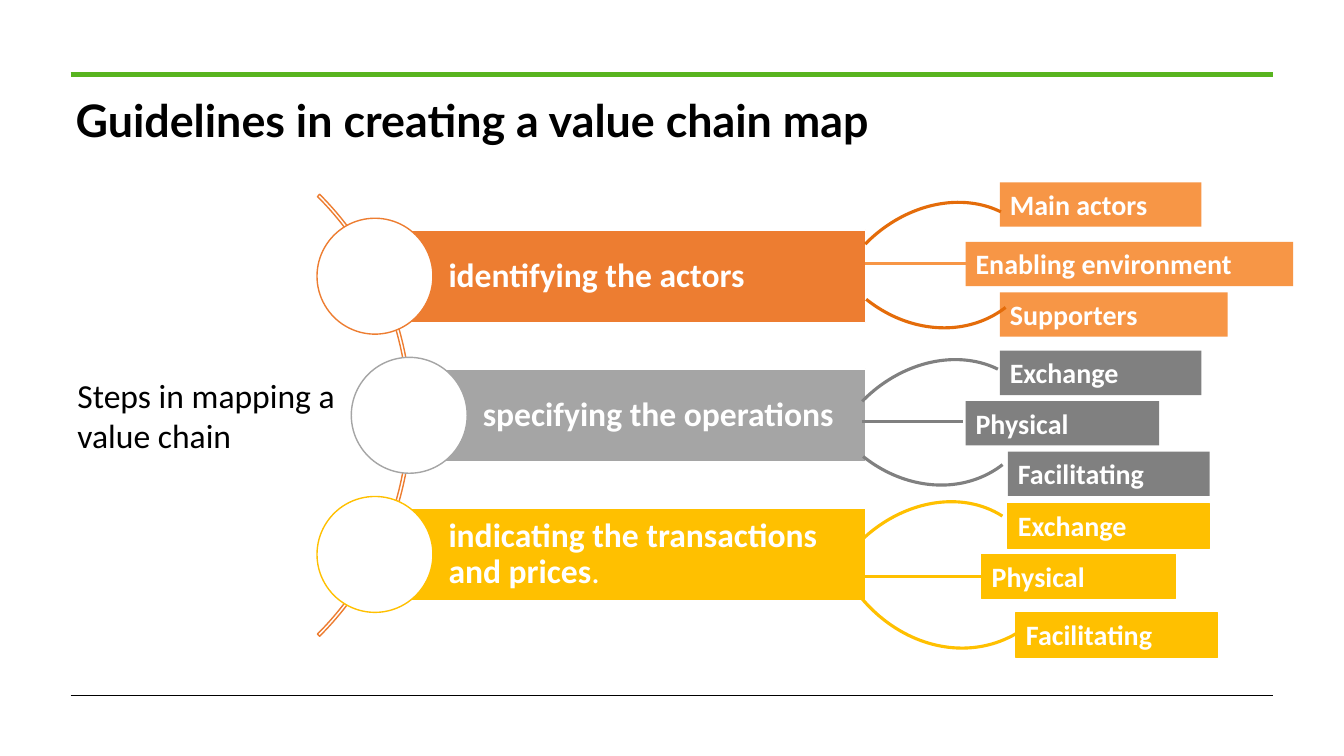
from pptx import Presentation
from pptx.dml.color import RGBColor as Rgb
from pptx.enum.shapes import MSO_CONNECTOR as Link, MSO_SHAPE as Preset
from pptx.enum.text import MSO_ANCHOR as Anchor, MSO_AUTO_SIZE as Fit, PP_ALIGN as Align
from pptx.oxml.ns import qn
from pptx.util import Pt
from lxml import etree

THEME = {
    "white": Rgb.from_string("FFFFFF"),
    "black": Rgb.from_string("000000"),
    "green": Rgb.from_string("58B41F"),
    "orange": Rgb.from_string("ED7D31"),
    "light_orange": Rgb.from_string("F79646"),
    "dark_orange": Rgb.from_string("E46C0A"),
    "silver": Rgb.from_string("A5A5A5"),
    "grey": Rgb.from_string("808080"),
    "gold": Rgb.from_string("FFC000"),
    "title": {"name": "Lato", "size": Pt(32), "bold": True},
    "caption": {"name": "Calibri", "size": Pt(24), "bold": False},
    "step": {"name": "Calibri", "size": Pt(24), "bold": True},
    "label": {"name": "Calibri", "size": Pt(20), "bold": True},
}


def paint(shape, fill=None, line=None, weight=1):
    shape.shadow.inherit = False
    for part, color in ((shape.fill, fill), (shape.line.fill, line)):
        if color:
            part.solid()
            part.fore_color.rgb = THEME[color]
        else:
            part.background()
    if line:
        shape.line.width = Pt(weight)


def write(shape, spans, style, color, frame):
    box = shape.text_frame
    for key, value in ({"word_wrap": True, "vertical_anchor": Anchor.TOP} | frame).items():
        setattr(box, key, value)
    para = box.paragraphs[0]
    para.alignment = Align.LEFT
    for text, changes in spans:
        span = para.add_run()
        span.text = text
        span.font.color.rgb = THEME[color]
        for key, value in (THEME[style] | changes).items():
            setattr(span.font, key, value)
    return para


deck = Presentation()
deck.slide_width, deck.slide_height = Pt(960), Pt(540)
page = deck.slides.add_slide(deck.slide_layouts[6])
shapes = page.shapes

GROW = {"auto_size": Fit.SHAPE_TO_FIT_TEXT}
NO_MARGIN = {f"margin_{side}": 0 for side in ("left", "top", "right", "bottom")}
STEP_FRAME = {
    "vertical_anchor": Anchor.MIDDLE,
    "margin_left": Pt(52.56),
    "margin_top": Pt(5.04),
    "margin_right": Pt(5.04),
    "margin_bottom": Pt(5.04),
}

title = shapes.add_textbox(Pt(54), Pt(66.24), Pt(752.4), Pt(38.88))
write(title, [("Guidelines in creating a value chain map", {})], "title", "black", GROW | NO_MARGIN)

caption = shapes.add_textbox(Pt(48.24), Pt(264.24), Pt(210.24), Pt(65.52))
write(caption, [("Steps in mapping a value chain", {})], "caption", "black", GROW)

spine = shapes.add_shape(Preset.BLOCK_ARC, Pt(-152.64), Pt(73.44), Pt(446.4), Pt(446.4))
for index, value in enumerate((189, 27, 0.005)):
    spine.adjustments[index] = value
paint(spine, line="orange")

BAR_RIGHT, FIRST_BAR, STEP_PITCH = 618.48, 164.16, 99.36
BAR_HEIGHT, CIRCLE = 66.24, 82.8
steps = [
    ("orange", 267.84, [("identifying the actors", {})]),
    ("silver", 292.32, [("specifying the operations", {})]),
    ("gold", 267.84, [("indicating the transactions and prices", {}), (".", {"bold": False})]),
]
for row, (color, left, spans) in enumerate(steps):
    top = FIRST_BAR + row * STEP_PITCH
    bar = shapes.add_shape(Preset.RECTANGLE, Pt(left), Pt(top), Pt(BAR_RIGHT - left), Pt(BAR_HEIGHT))
    paint(bar, color, "white")
    write(bar, spans, "step", "white", STEP_FRAME).line_spacing = 0.9
    circle = shapes.add_shape(
        Preset.OVAL, Pt(left - CIRCLE / 2), Pt(top + (BAR_HEIGHT - CIRCLE) / 2), Pt(CIRCLE), Pt(CIRCLE)
    )
    paint(circle, "white", color)

labels = [
    ("light_orange", None, [
        ("Main actors", 714.24, 130.32, 144),
        ("Supporters", 714.24, 208.8, 162.72),
        ("Enabling environment", 689.76, 172.8, 234),
    ]),
    ("grey", None, [
        ("Exchange", 714.24, 250.56, 144),
        ("Physical", 689.76, 286.56, 138.24),
        ("Facilitating", 720, 322.56, 144),
    ]),
    ("gold", "gold", [
        ("Exchange", 720, 360, 144),
        ("Physical", 701.28, 396, 138.24),
        ("Facilitating", 725.76, 437.76, 144),
    ]),
]
for fill, line, entries in labels:
    for text, left, top, width in entries:
        label = shapes.add_shape(Preset.RECTANGLE, Pt(left), Pt(top), Pt(width), Pt(31.68))
        paint(label, fill, line, 0.75)
        write(label, [(text, {})], "label", "white", GROW)

arcs = [
    ("dark_orange", 582.48, 152.64, 174.24, 144, 314.3, 162, 208.47),
    ("dark_orange", 585.36, 59.04, 156.24, 179.28, 142.3, 162, 205.33),
    ("grey", 580.32, 264.96, 174.24, 144, 314.3, 162, 208.47),
    ("grey", 583.2, 171.36, 156.24, 179.28, 142.3, 162, 205.33),
    ("gold", 577.44, 366.48, 174.24, 144, 314.3, 162, 211.26),
    ("gold", 591.12, 265.68, 172.8, 199.44, 155.2, 158.52, 205.33),
]
for color, left, top, width, height, turn, start, end in arcs:
    arc = shapes.add_shape(Preset.ARC, Pt(left), Pt(top), Pt(width), Pt(height))
    arc.rotation = turn
    arc.adjustments[0], arc.adjustments[1] = start, end
    paint(arc, line=color, weight=2.25)

lines = [
    ("green", 3, 50.4, 909.36, 53.28),
    ("black", 0.48, 50.4, 909.36, 496.8),
    ("light_orange", 2.25, 617.76, 689.76, 187.92),
    ("grey", 2.25, 615.6, 687.6, 300.96),
    ("gold", 2.25, 617.76, 701.28, 411.84),
]
for color, weight, left, right, top in lines:
    rule = shapes.add_connector(Link.STRAIGHT, Pt(left), Pt(top), Pt(right), Pt(top))
    rule.line.color.rgb = THEME[color]
    rule.line.width = Pt(weight)
    etree.SubElement(rule._element.spPr, qn("a:effectLst"))

deck.save("out.pptx")
